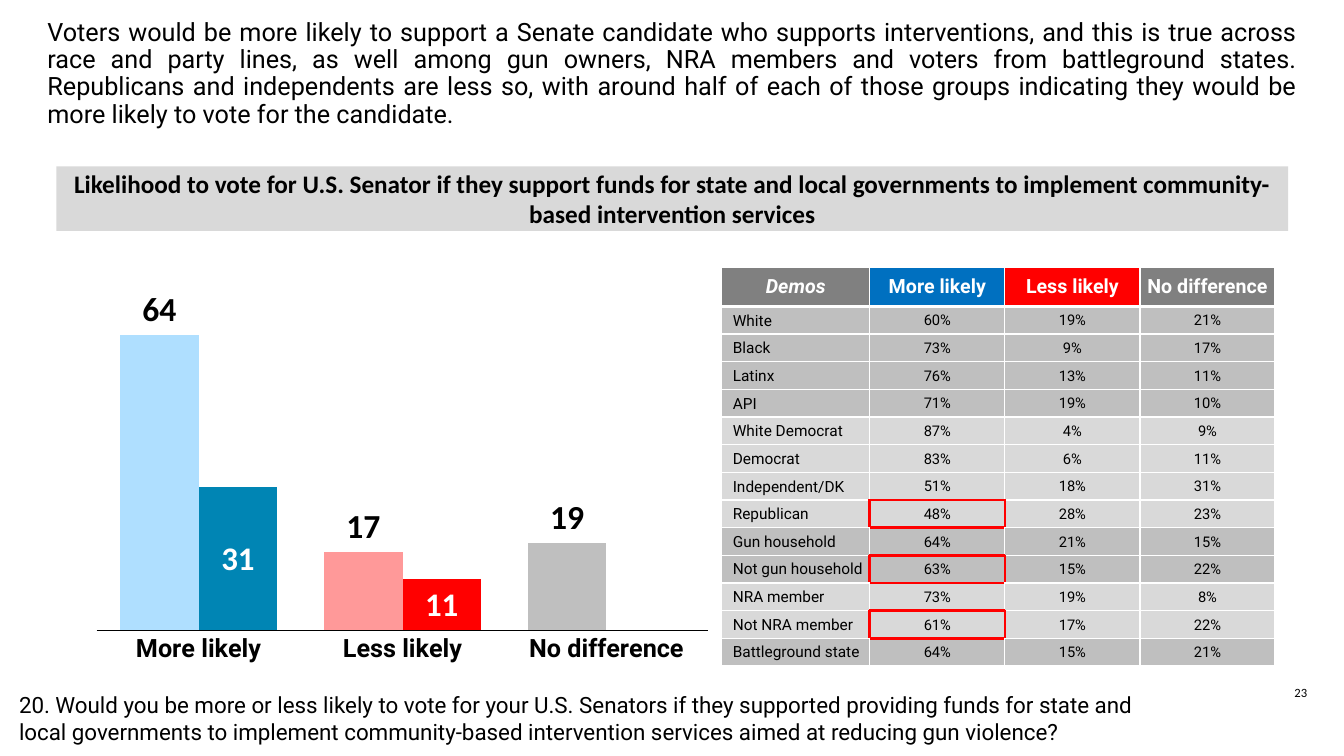
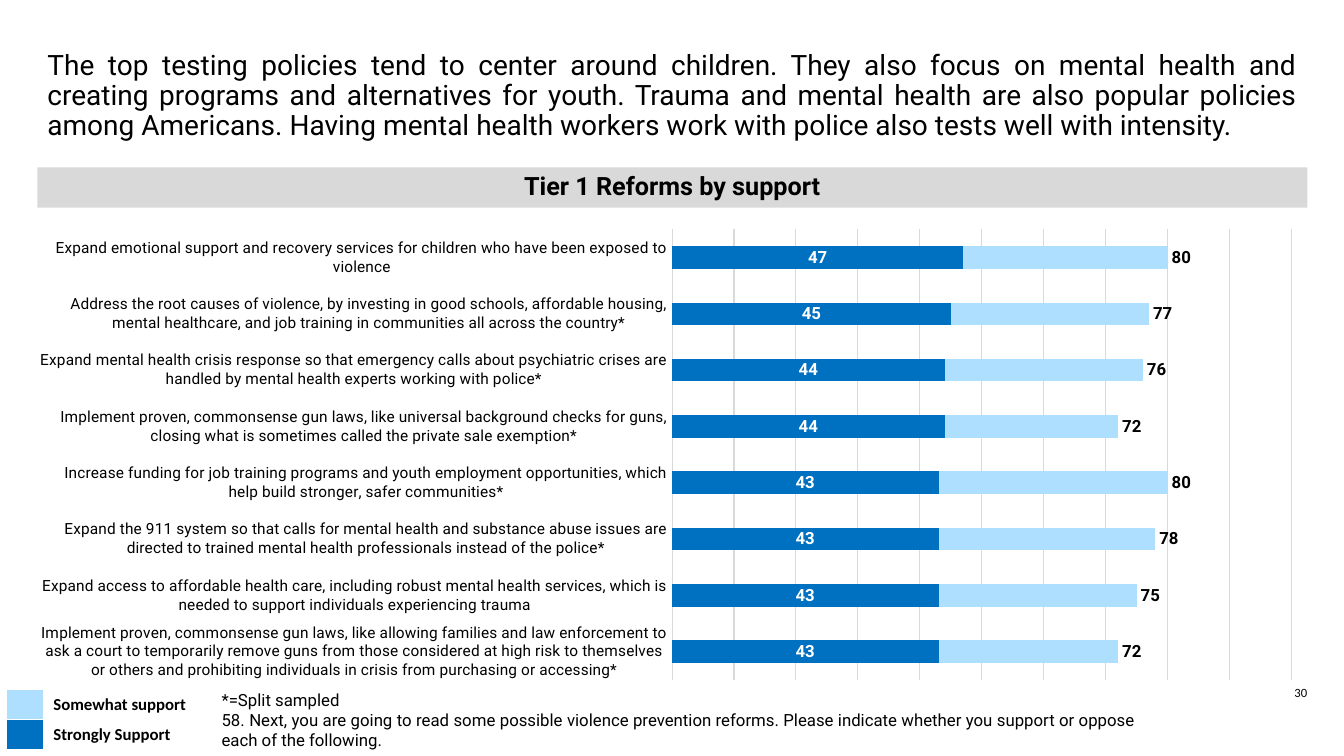
"""Build two survey result slides with native charts and tables."""
from copy import deepcopy
from dataclasses import dataclass
from typing import Optional

from lxml import etree
from pptx import Presentation
from pptx.chart.data import CategoryChartData
from pptx.dml.color import RGBColor
from pptx.enum.chart import XL_CHART_TYPE, XL_LABEL_POSITION, XL_TICK_MARK
from pptx.enum.shapes import MSO_SHAPE
from pptx.enum.text import MSO_ANCHOR, MSO_AUTO_SIZE, PP_ALIGN
from pptx.oxml.ns import qn
from pptx.util import Inches, Pt

COLUMNS = XL_CHART_TYPE.COLUMN_CLUSTERED
STACKED_BARS = XL_CHART_TYPE.BAR_STACKED
OUTSIDE = XL_LABEL_POSITION.OUTSIDE_END
CENTER_LABEL = XL_LABEL_POSITION.CENTER
INSIDE_BASE = XL_LABEL_POSITION.INSIDE_BASE
NO_TICK = XL_TICK_MARK.NONE
RECTANGLE = MSO_SHAPE.RECTANGLE
MIDDLE = MSO_ANCHOR.MIDDLE
NO_FIT = MSO_AUTO_SIZE.NONE
LEFT, CENTER, JUSTIFY = PP_ALIGN.LEFT, PP_ALIGN.CENTER, PP_ALIGN.JUSTIFY

SANS, LABEL_FONT = "Roboto", "Calibri"
BLACK, WHITE = "000000", "FFFFFF"
LIGHT_GRAY, MID_GRAY, DARK_GRAY = "D9D9D9", "BFBFBF", "808080"
BLUE, SKY, TEAL = "0070C0", "AFDFFF", "0085B4"
RED, PINK = "FF0000", "FF9999"
SIDES = {"lnL": (0, -1), "lnR": (0, 1), "lnT": (-1, 0), "lnB": (1, 0)}

HEADERS = [("Demos", DARK_GRAY), ("More likely", BLUE),
           ("Less likely", RED), ("No difference", DARK_GRAY)]
DEMOGRAPHICS = [
    ("White", 60, 19, 21, MID_GRAY), ("Black", 73, 9, 17, MID_GRAY),
    ("Latinx", 76, 13, 11, MID_GRAY), ("API", 71, 19, 10, MID_GRAY),
    ("White Democrat", 87, 4, 9, LIGHT_GRAY), ("Democrat", 83, 6, 11, LIGHT_GRAY),
    ("Independent/DK", 51, 18, 31, LIGHT_GRAY), ("Republican", 48, 28, 23, LIGHT_GRAY),
    ("Gun household", 64, 21, 15, MID_GRAY), ("Not gun household", 63, 15, 22, MID_GRAY),
    ("NRA member", 73, 19, 8, LIGHT_GRAY), ("Not NRA member", 61, 17, 22, LIGHT_GRAY),
    ("Battleground state", 64, 15, 21, MID_GRAY),
]
HIGHLIGHTED = {(8, 1), (10, 1), (12, 1)}

REFORMS = [
    "Expand emotional support and recovery services for children who have been exposed to violence",
    "Address the root causes of violence, by investing in good schools, affordable housing, mental healthcare, and job training in communities all across the country*",
    "Expand mental health crisis response so that emergency calls about psychiatric crises are handled by mental health experts working with police*",
    "Implement proven, commonsense gun laws, like universal background checks for guns, closing what is sometimes called the private sale exemption*",
    "Increase funding for job training programs and youth employment opportunities, which help build stronger, safer communities*",
    "Expand the 911 system so that calls for mental health and substance abuse issues are directed to trained mental health professionals instead of the police*",
    "Expand access to affordable health care, including robust mental health services, which is needed to support individuals experiencing trauma",
    "Implement proven, commonsense gun laws, like allowing families and law enforcement to ask a court to temporarily remove guns from those considered at high risk to themselves or others and prohibiting individuals in crisis from purchasing or accessing*",
]


@dataclass(frozen=True)
class Area:
    """Position and size in inches."""
    left: float
    top: float
    width: float
    height: float

    def lengths(self) -> tuple:
        """Return the four lengths for a shape call."""
        return tuple(map(Inches, (self.left, self.top, self.width, self.height)))


@dataclass(frozen=True)
class Series:
    """One chart series with its fill colours and labels."""
    values: tuple
    color: Optional[str]
    point_colors: tuple = ()
    label_color: Optional[str] = None
    label_position: Optional[XL_LABEL_POSITION] = None
    label_size: float = 12


@dataclass(frozen=True)
class ChartStyle:
    """Scale, spacing and fonts of a chart."""
    maximum: int
    gap: int
    overlap: int
    plot: tuple
    axis_size: float
    axis_bold: bool
    axis_color: str
    axis_width: float
    label_font: str


def rgb(color: str) -> RGBColor:
    """Turn a hex string into a colour."""
    return RGBColor.from_string(color)


def set_font(font, *, size: float, name: str = SANS, color: str = BLACK,
             bold: bool = False, italic: bool = False) -> None:
    """Format a font."""
    font.size, font.name, font.bold, font.italic = Pt(size), name, bold, italic
    font.color.rgb = rgb(color)


def write(frame, text: str, *, align=LEFT, spacing: Optional[float] = None, **font_format) -> None:
    """Write each line of the text as a formatted paragraph."""
    for index, line in enumerate(text.split("\n")):
        para = frame.add_paragraph() if index else frame.paragraphs[0]
        para.alignment, para.line_spacing = align, spacing
        span = para.add_run()
        span.text = line
        set_font(span.font, **font_format)


def add_text(page, area: Area, text: str, **text_format) -> None:
    """Add a wrapping text box."""
    frame = page.shapes.add_textbox(*area.lengths()).text_frame
    frame.word_wrap = True
    write(frame, text, **text_format)


def add_page(deck, title: str, top: float, size: float, number: int):
    """Add a page with its justified title and page number."""
    page = deck.slides.add_slide(deck.slide_layouts[5])
    box = page.shapes.title
    box.left, box.top, box.width, box.height = Area(0.37, top, 12.6, 1.45).lengths()
    frame = box.text_frame
    frame.auto_size, frame.word_wrap, frame.vertical_anchor = NO_FIT, True, MIDDLE
    write(frame, title, align=JUSTIFY, spacing=0.9, size=size)
    add_text(page, Area(12.53, 6.75, 0.75, 0.33), str(number), align=CENTER, size=9, name=LABEL_FONT)
    return page


def add_band(page, area: Area, text: str, **text_format) -> None:
    """Add the gray heading band over a chart."""
    band = page.shapes.add_shape(RECTANGLE, *area.lengths())
    band.shadow.inherit = False
    fill_solid(band.fill, LIGHT_GRAY)
    band.line.fill.background()
    band.text_frame.word_wrap = True
    band.text_frame.vertical_anchor = MIDDLE
    write(band.text_frame, text, align=CENTER, size=18, bold=True, **text_format)


def place_plot(chart, plot_box: tuple) -> None:
    """Fix the inner plot area as fractions of the chart."""
    plot_area = chart._chartSpace.chart.plotArea
    for old in plot_area.findall(qn("c:layout")):
        plot_area.remove(old)
    layout = etree.Element(qn("c:layout"))
    manual = etree.SubElement(layout, qn("c:manualLayout"))
    settings = [("layoutTarget", "inner"), ("xMode", "edge"), ("yMode", "edge")]
    for tag, value in settings + list(zip("xywh", plot_box)):
        etree.SubElement(manual, qn(f"c:{tag}")).set("val", str(value))
    plot_area.insert(0, layout)


def use_second_axis(chart, maximum: int) -> None:
    """Move the last of two column series to a hidden second axis."""
    plot_area = chart._chartSpace.chart.plotArea
    first = plot_area.find(qn("c:barChart"))
    second = deepcopy(first)
    first.remove(first.findall(qn("c:ser"))[1])
    second.remove(second.find(qn("c:ser")))
    first.addnext(second)
    category, value = plot_area.find(qn("c:catAx")), plot_area.find(qn("c:valAx"))
    hidden = [deepcopy(value), deepcopy(category)]
    for axis in reversed(hidden):
        value.addnext(axis)
        axis.find(qn("c:delete")).set("val", "1")
    for part in [second] + hidden:
        for link in part.findall(qn("c:axId")) + part.findall(qn("c:crossAx")):
            link.set("val", str(int(link.get("val")) + 1))
    hidden[0].find(qn("c:scaling")).find(qn("c:max")).set("val", str(maximum))
    hidden[0].find(qn("c:crosses")).set("val", "max")


def fill_solid(fill, color: Optional[str]) -> None:
    """Fill with a colour, or with nothing."""
    if color is None:
        fill.background()
    else:
        fill.solid()
        fill.fore_color.rgb = rgb(color)


def add_bars(page, area: Area, kind, categories: list, series: list, style: ChartStyle):
    """Add a bar chart and return it."""
    data = CategoryChartData()
    data.categories = categories
    for index, item in enumerate(series, 1):
        data.add_series(f"Series {index}", item.values)
    chart = page.shapes.add_chart(kind, *area.lengths(), data).chart
    chart.has_legend = chart.has_title = False
    set_font(chart.font, size=12, name=LABEL_FONT)
    place_plot(chart, style.plot)
    plot = chart.plots[0]
    plot.gap_width, plot.overlap, plot.vary_by_categories = style.gap, style.overlap, False
    for drawn, item in zip(plot.series, series):
        drawn.invert_if_negative = False
        fill_solid(drawn.format.fill, item.color)
        for index, color in enumerate(item.point_colors):
            fill_solid(drawn.points[index].format.fill, color)
        if item.label_color:
            labels = drawn.data_labels
            labels.show_value, labels.position = True, item.label_position
            set_font(labels.font, size=item.label_size, name=style.label_font,
                     color=item.label_color, bold=True)
    scale, axis = chart.value_axis, chart.category_axis
    scale.minimum_scale, scale.maximum_scale = 0, style.maximum
    scale.visible = scale.has_major_gridlines = False
    axis.major_tick_mark = axis.minor_tick_mark = NO_TICK
    axis.format.line.color.rgb = rgb(style.axis_color)
    axis.format.line.width = Pt(style.axis_width)
    set_font(axis.tick_labels.font, size=style.axis_size, bold=style.axis_bold)
    return chart


def set_border(cell, side: str, color: str, width: float) -> None:
    """Draw one side of a cell border."""
    line = etree.Element(qn(f"a:{side}"), w=str(Pt(width)))
    fill = etree.SubElement(line, qn("a:solidFill"))
    etree.SubElement(fill, qn("a:srgbClr")).set("val", color)
    cell._tc.get_or_add_tcPr().insert(list(SIDES).index(side), line)


def add_grid(page, area: Area, widths: list, heights: list):
    """Add a plain table with the given column widths and row heights."""
    table = page.shapes.add_table(len(heights), len(widths), *area.lengths()).table
    table.first_row = table.horz_banding = False
    for column, width in zip(table.columns, widths):
        column.width = Inches(width)
    for row, height in zip(table.rows, heights):
        row.height = Inches(height)
    return table


def fill_cell(cell, text: str, fill: Optional[str], margins: tuple, **text_format) -> None:
    """Set the fill, margins and text of a cell."""
    fill_solid(cell.fill, fill)
    cell.vertical_anchor = MIDDLE
    (cell.margin_left, cell.margin_top,
     cell.margin_right, cell.margin_bottom) = map(Inches, margins)
    write(cell.text_frame, text, **text_format)


def add_demographics(page) -> None:
    """Add the table of demographic groups."""
    count = len(DEMOGRAPHICS)
    table = add_grid(page, Area(7.16, 2.65, 5.49, 3.96), [1.47] + [1.34] * 3,
                     [0.39] + [3.57 / count] * count)
    for column, (text, fill) in enumerate(HEADERS):
        fill_cell(table.cell(0, column), text, fill, (0.02,) * 4, align=CENTER, size=14,
                  color=WHITE, bold=True, italic=column == 0)
    for row, (group, *shares, fill) in enumerate(DEMOGRAPHICS, 1):
        fill_cell(table.cell(row, 0), group, fill, (0.11, 0.01, 0.01, 0), size=11)
        for column, share in enumerate(shares, 1):
            fill_cell(table.cell(row, column), f"{share}%", fill, (0.01, 0.01, 0.01, 0),
                      align=CENTER, size=10.5)
    for row in range(count + 1):
        for column in range(len(HEADERS)):
            for side, (down, right) in SIDES.items():
                marked = HIGHLIGHTED & {(row, column), (row + down, column + right)}
                under_header = (row, side) in {(0, "lnB"), (1, "lnT")}
                color, width = (RED, 2.25) if marked else (WHITE, 3 if under_header else 1)
                set_border(table.cell(row, column), side, color, width)


def add_key(page) -> None:
    """Add the colour key of the reform chart."""
    table = add_grid(page, Area(0.06, 6.84, 2.09, 0.6), [0.37, 1.72], [0.3, 0.3])
    for row, (text, color) in enumerate([("Somewhat support", SKY), ("Strongly Support", BLUE)]):
        key_format = {"size": 12, "name": LABEL_FONT, "bold": True}
        fill_cell(table.cell(row, 0), "", color, (0,) * 4, **key_format)
        fill_cell(table.cell(row, 1), text, None, (0.1, 0.05, 0.1, 0.05), **key_format)
        for column in range(2):
            for side in SIDES:
                set_border(table.cell(row, column), side, WHITE, 1)


def build_senate_page(deck) -> None:
    """Build the page about Senate candidates."""
    page = add_page(deck, "Voters would be more likely to support a Senate candidate who supports interventions, and this is true across race and party lines, as well among gun owners, NRA members and voters from battleground states. Republicans and independents are less so, with around half of each of those groups indicating they would be more likely to vote for the candidate.", 0.01, 18, 23)
    series = [Series((64, 17, 19), SKY, (SKY, PINK, MID_GRAY), BLACK, OUTSIDE, 24),
              Series((31, 11, None), TEAL, (TEAL, RED), WHITE, CENTER_LABEL, 23.5)]
    style = ChartStyle(85, 60, 0, (0.003, 0.033, 0.997, 0.771), 18, True, BLACK, 0.25, LABEL_FONT)
    chart = add_bars(page, Area(0.94, 2.2, 6.09, 5.04), COLUMNS, [text for text, _ in HEADERS[1:]], series, style)
    use_second_axis(chart, 50)
    add_band(page, Area(0.56, 1.65, 12.22, 0.64), "Likelihood to vote for U.S. Senator if they support funds for state and local governments to implement community-based intervention services", name=LABEL_FONT)
    add_text(page, Area(0.09, 6.81, 11.41, 0.64), "20. Would you be more or less likely to vote for your U.S. Senators if they supported providing funds for state and local governments to implement community-based intervention services aimed at reducing gun violence?", size=16)
    add_demographics(page)


def build_reform_page(deck) -> None:
    """Build the page about reforms."""
    page = add_page(deck, "The top testing policies tend to center around children. They also focus on mental health and creating programs and alternatives for youth. Trauma and mental health are also popular policies among Americans. Having mental health workers work with police also tests well with intensity.", 0.23, 20, 30)
    add_band(page, Area(0.37, 1.66, 12.6, 0.4), "Tier 1 Reforms by support", spacing=0.9)
    strong, total = (47, 45, 44, 44, 43, 43, 43, 43), (80, 77, 76, 72, 80, 78, 75, 72)
    somewhat = tuple(whole - part for whole, part in zip(total, strong))
    series = [Series(strong, BLUE, (), WHITE, CENTER_LABEL), Series(somewhat, SKY),
              Series(total, None, (), BLACK, INSIDE_BASE)]
    style = ChartStyle(100, 150, 100, (0.506, 0, 0.494, 1), 11, False, LIGHT_GRAY, 0.75, SANS)
    chart = add_bars(page, Area(0.37, 2.27, 12.45, 4.48), STACKED_BARS, REFORMS, series, style)
    chart.category_axis.reverse_order = True
    scale = chart.value_axis
    scale.major_unit, scale.has_major_gridlines = 10, True
    scale.major_gridlines.format.line.color.rgb = rgb(LIGHT_GRAY)
    scale.major_gridlines.format.line.width = Pt(0.75)
    add_text(page, Area(2.1, 6.79, 9.27, 0.71), "*=Split sampled\n58. Next, you are going to read some possible violence prevention reforms. Please indicate whether you support or oppose each of the following.", align=JUSTIFY, size=12)
    add_key(page)


def main() -> None:
    """Build and save the deck."""
    deck = Presentation()
    deck.slide_width, deck.slide_height = Inches(40 / 3), Inches(7.5)
    build_senate_page(deck)
    build_reform_page(deck)
    deck.save("out.pptx")


if __name__ == "__main__":
    main()
